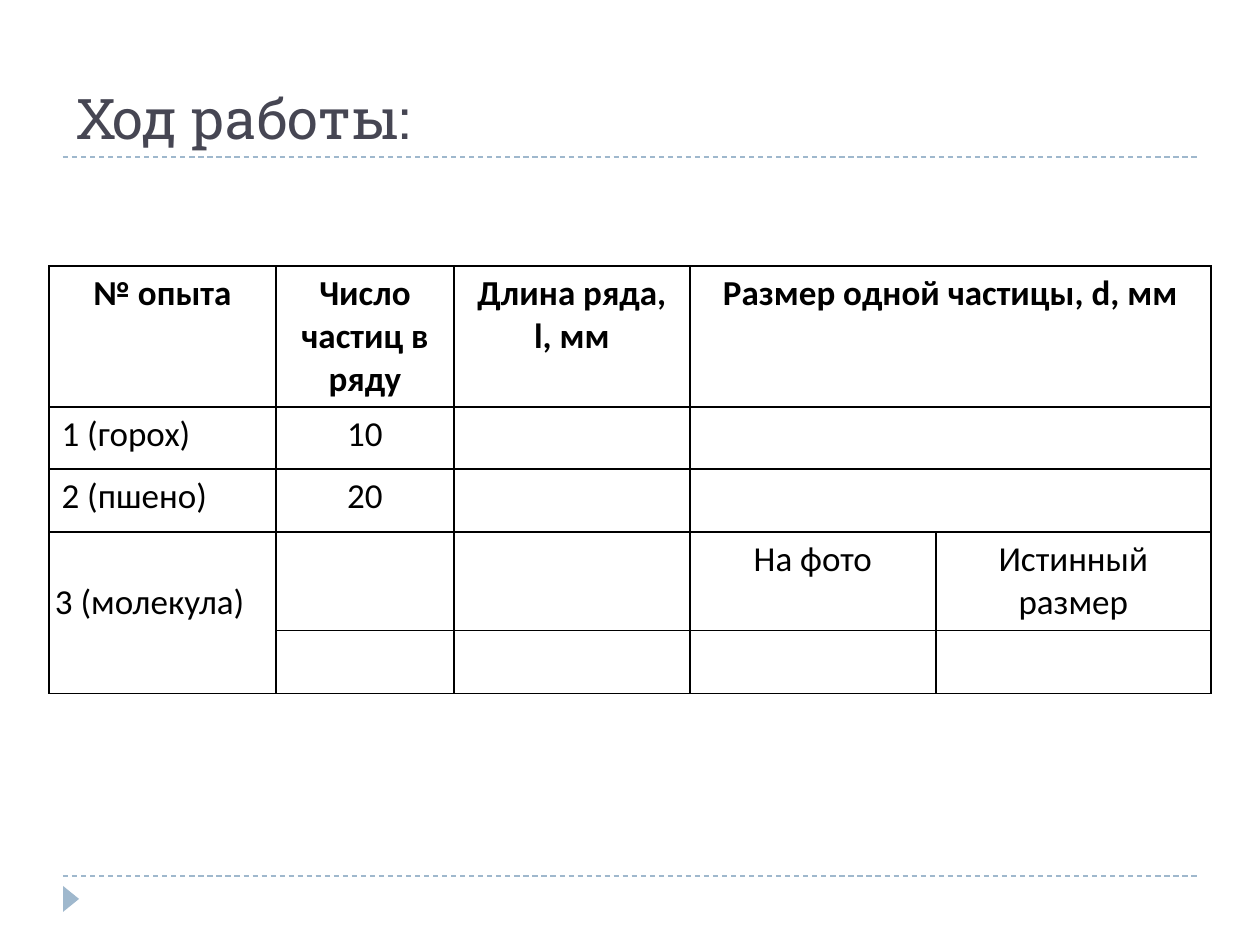
from lxml.etree import SubElement
from pptx import Presentation
from pptx.dml.color import RGBColor
from pptx.enum.dml import MSO_LINE
from pptx.enum.shapes import MSO_CONNECTOR, MSO_SHAPE
from pptx.enum.text import MSO_ANCHOR, MSO_AUTO_SIZE, PP_ALIGN
from pptx.oxml.ns import qn
from pptx.util import Pt

PX = 914400 // 126
BLACK = RGBColor(0x00, 0x00, 0x00)
SLATE = RGBColor(0x46, 0x46, 0x53)
BLUE = RGBColor(0x9F, 0xB8, 0xCD)


def write(frame, text, size=20, font="Calibri", color=BLACK, bold=False, align=PP_ALIGN.CENTER):
    paragraph = frame.paragraphs[0]
    paragraph.alignment = align
    run = paragraph.add_run()
    run.text = text
    run.font.size = Pt(size)
    run.font.name = font
    run.font.bold = bold
    run.font.color.rgb = color


def add_borders(cell):
    properties = cell._tc.get_or_add_tcPr()
    for side in ("lnL", "lnR", "lnT", "lnB"):
        border = SubElement(properties, qn(f"a:{side}"), w=str(Pt(1)))
        fill = SubElement(border, qn("a:solidFill"))
        SubElement(fill, qn("a:srgbClr"), val=str(BLACK))


prs = Presentation()
prs.slide_width = 1260 * PX
prs.slide_height = 945 * PX
slide = prs.slides.add_slide(prs.slide_layouts[5])

for y in (876, 157):
    rule = slide.shapes.add_connector(MSO_CONNECTOR.STRAIGHT, 63 * PX, y * PX, 1197 * PX, y * PX)
    rule.line.color.rgb = BLUE
    rule.line.width = Pt(0.75)
    rule.line.dash_style = MSO_LINE.DASH
    SubElement(rule._element.spPr, qn("a:effectLst"))

marker = slide.shapes.add_shape(MSO_SHAPE.ISOSCELES_TRIANGLE, 58 * PX, 891 * PX, 26 * PX, 16 * PX)
marker.rotation = 90
marker.shadow.inherit = False
marker.fill.solid()
marker.fill.fore_color.rgb = BLUE
marker.line.fill.background()

title = slide.shapes.title
title.left, title.top, title.width, title.height = 63 * PX, 31 * PX, 1134 * PX, 126 * PX
title.text_frame.vertical_anchor = MSO_ANCHOR.BOTTOM
title.text_frame.auto_size = MSO_AUTO_SIZE.NONE
write(title.text_frame, "Ход работы:", size=32, font="Roboto Slab", color=SLATE, align=PP_ALIGN.LEFT)

column_widths = [227, 178, 236, 246, 275]
row_heights = [141, 62, 63, 98, 63]
results = [
    ["№ опыта", "Число частиц в ряду", "Длина ряда, l, мм", "Размер одной частицы, d, мм", ""],
    ["1 (горох)", "10", "", "", ""],
    ["2 (пшено)", "20", "", "", ""],
    ["3 (молекула)", "", "", "На фото", "Истинный размер"],
    ["", "", "", "", ""],
]
table = slide.shapes.add_table(
    len(row_heights), len(column_widths), 49 * PX, 266 * PX,
    sum(column_widths) * PX, sum(row_heights) * PX,
).table
table.first_row = False
table.horz_banding = False
for column, width in zip(table.columns, column_widths):
    column.width = width * PX
for row, height in zip(table.rows, row_heights):
    row.height = height * PX

for r, texts in enumerate(results):
    for c, text in enumerate(texts):
        cell = table.cell(r, c)
        add_borders(cell)
        cell.fill.background()
        if text:
            align = PP_ALIGN.LEFT if c == 0 and r > 0 else PP_ALIGN.CENTER
            write(cell.text_frame, text, bold=r == 0, align=align)

for r in range(3):
    table.cell(r, 3).merge(table.cell(r, 4))
molecule = table.cell(3, 0)
molecule.merge(table.cell(4, 0))
molecule.margin_left = molecule.margin_right = molecule.margin_bottom = 6 * PX
molecule.margin_top = 49 * PX

prs.save("out.pptx")
